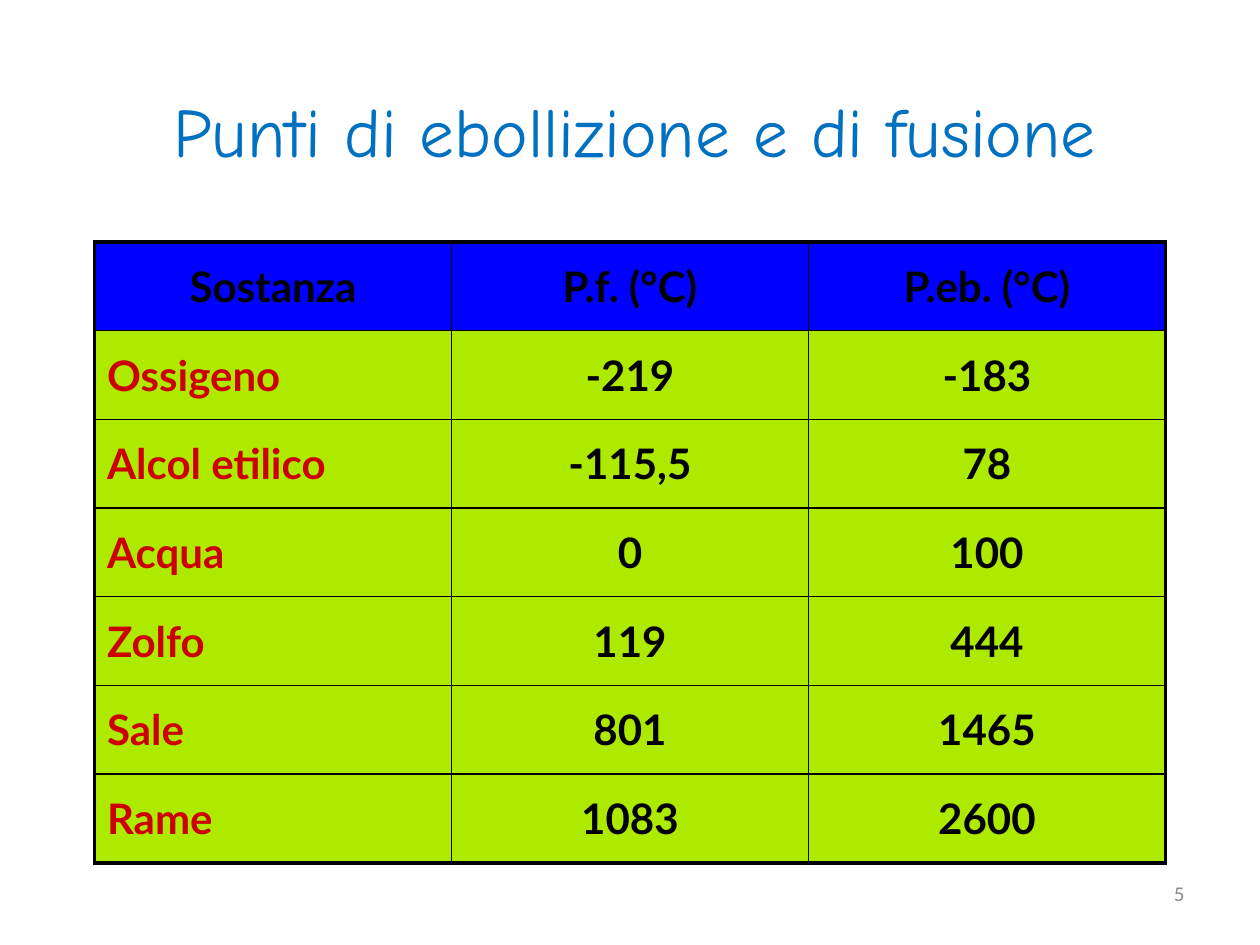
from lxml import etree
from pptx import Presentation
from pptx.dml.color import RGBColor
from pptx.enum.text import MSO_ANCHOR, PP_ALIGN
from pptx.oxml.ns import qn
from pptx.util import Inches, Pt

LEFT, CENTER, RIGHT = PP_ALIGN.LEFT, PP_ALIGN.CENTER, PP_ALIGN.RIGHT
MIDDLE = MSO_ANCHOR.MIDDLE

BLACK = RGBColor(0x00, 0x00, 0x00)
BLUE = RGBColor(0x00, 0x00, 0xFF)
LIME = RGBColor(0xAD, 0xEA, 0x00)
RED = RGBColor(0xCC, 0x00, 0x00)
SKY = RGBColor(0x00, 0x70, 0xC0)
GRAY = RGBColor(0x8C, 0x8C, 0x8C)

TITLE = "Punti di ebollizione e di fusione"
NUMBER = "5"
ROWS = [
    ("Sostanza", "P.f. (°C)", "P.eb. (°C)"),
    ("Ossigeno", "-219", "-183"),
    ("Alcol etilico", "-115,5", "78"),
    ("Acqua", "0", "100"),
    ("Zolfo", "119", "444"),
    ("Sale", "801", "1465"),
    ("Rame", "1083", "2600"),
]
THICK, THIN = Pt(2.25), Pt(1)


def write(frame, text, font, size, color, align, bold=False):
    frame.text = text
    par = frame.paragraphs[0]
    par.alignment = align
    face = par.runs[0].font
    face.name, face.size, face.bold = font, Pt(size), bold
    face.color.rgb = color


def border(cell, sides):
    """Draw black cell edges; sides maps L, R, T, B, in that order, to widths."""
    props = cell._tc.get_or_add_tcPr()
    for side, width in sides.items():
        line = etree.SubElement(props, qn(f"a:ln{side}"), w=str(int(width)))
        fill = etree.SubElement(line, qn("a:solidFill"))
        etree.SubElement(fill, qn("a:srgbClr"), val=str(BLACK))


def add_grid(slide):
    count, wide = len(ROWS), len(ROWS[0])
    table = slide.shapes.add_table(
        count, wide, Inches(0.75), Inches(1.92), Inches(8.5), Inches(4.93)
    ).table
    for r, row in enumerate(ROWS):
        for c, text in enumerate(row):
            cell = table.cell(r, c)
            head, name = r == 0, r > 0 and c == 0
            border(cell, {
                "L": THICK if c == 0 else THIN,
                "R": THICK if c == wide - 1 else THIN,
                "T": THICK if head else THIN,
                "B": THICK if r == count - 1 else THIN,
            })
            cell.fill.solid()
            cell.fill.fore_color.rgb = BLUE if head else LIME
            cell.vertical_anchor = MIDDLE
            write(cell.text_frame, text, "Lato", 24, RED if name else BLACK,
                  LEFT if name else CENTER, True)


def main():
    deck = Presentation()
    deck.slide_width, deck.slide_height = Inches(10), Inches(7.5)
    slide = deck.slides.add_slide(deck.slide_layouts[5])

    title = slide.shapes.title
    title.left, title.top = Inches(0.35), Inches(0.28)
    title.width, title.height = Inches(9.37), Inches(1.5)
    title.text_frame.vertical_anchor = MIDDLE
    write(title.text_frame, TITLE, "Comic Neue", 39.6, SKY, CENTER)

    add_grid(slide)

    box = slide.shapes.add_textbox(
        Inches(7.17), Inches(6.83), Inches(2.33), Inches(0.52))
    box.text_frame.word_wrap = True
    box.text_frame.vertical_anchor = MIDDLE
    write(box.text_frame, NUMBER, "Calibri", 12, GRAY, RIGHT)

    deck.save("out.pptx")


if __name__ == "__main__":
    main()
